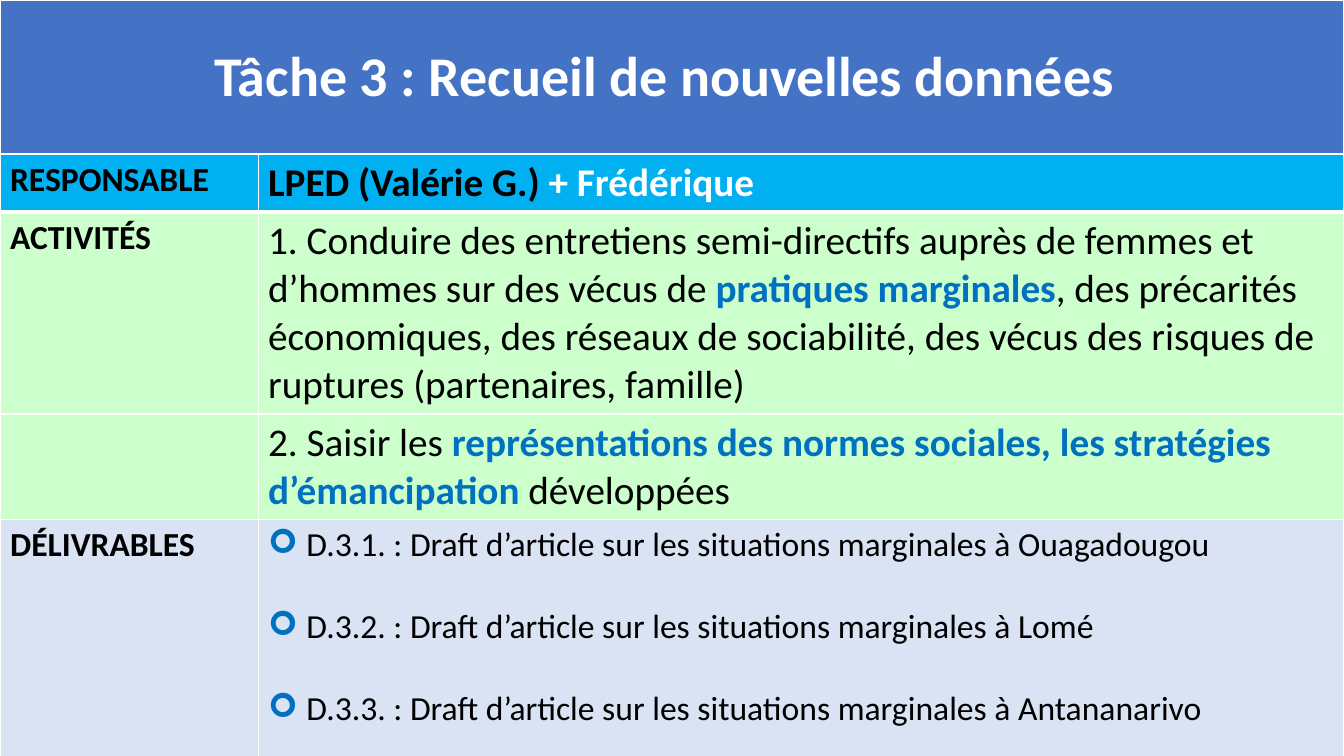
from lxml.etree import SubElement
from pptx import Presentation
from pptx.dml.color import RGBColor
from pptx.enum.shapes import MSO_SHAPE as Shape
from pptx.enum.text import MSO_ANCHOR as Anchor, PP_ALIGN as Align
from pptx.oxml.ns import qn
from pptx.util import Inches, Pt

WHITE = RGBColor(0xFF, 0xFF, 0xFF)
BLACK = RGBColor(0x00, 0x00, 0x00)
TITLE_BLUE = RGBColor(0x44, 0x72, 0xC4)
LEAD_BLUE = RGBColor(0x00, 0xB0, 0xF0)
ACCENT_BLUE = RGBColor(0x00, 0x70, 0xC0)
GREEN = RGBColor(0xCC, 0xFF, 0xCC)
PALE_BLUE = RGBColor(0xDA, 0xE3, 0xF3)

FONT = "Calibri"
TITLE_HEIGHT = 1.53
COLUMN_WIDTHS = [2.56, 10.77]
CITIES = ["Ouagadougou", "Lomé", "Antananarivo"]


def add_text(para, text, size=28, color=BLACK, bold=False):
    span = para.add_run()
    span.text = text
    span.font.name = FONT
    span.font.size = Pt(size)
    span.font.bold = bold
    span.font.color.rgb = color


def add_bullet(para, indent=0.38):
    properties = para._p.get_or_add_pPr()
    properties.set("marL", str(Inches(indent)))
    properties.set("indent", str(-Inches(indent)))
    color = SubElement(properties, qn("a:buClr"))
    SubElement(color, qn("a:srgbClr"), val=str(ACCENT_BLUE))
    SubElement(properties, qn("a:buFont"), typeface="Wingdings")
    SubElement(properties, qn("a:buChar"), char="➢")


def format_cell(cell, fill, bottom_width=1):
    properties = cell._tc.get_or_add_tcPr()
    widths = {"a:lnL": 1, "a:lnR": 1, "a:lnT": 1, "a:lnB": bottom_width}
    for side, width in widths.items():
        line = SubElement(properties, qn(side), w=str(Pt(width)))
        solid = SubElement(line, qn("a:solidFill"))
        SubElement(solid, qn("a:srgbClr"), val=str(WHITE))
    cell.fill.solid()
    cell.fill.fore_color.rgb = fill


def add_title(page, left, top, width, height):
    box = page.shapes.add_shape(
        Shape.RECTANGLE, Inches(left), Inches(top), Inches(width), Inches(height)
    )
    box.shadow.inherit = False
    box.fill.solid()
    box.fill.fore_color.rgb = TITLE_BLUE
    box.line.color.rgb = WHITE
    box.line.width = Pt(1.5)
    frame = box.text_frame
    frame.word_wrap = True
    frame.vertical_anchor = Anchor.MIDDLE
    frame.margin_right = Inches(0.25)
    frame.margin_bottom = Inches(0.11)
    para = frame.paragraphs[0]
    para.alignment = Align.CENTER
    add_text(para, "Tâche 3\u00a0: Recueil de nouvelles données".replace("\u00a0", " "),
             size=40, color=WHITE, bold=True)


def add_task_table(page, left, top, width):
    accent = {"color": ACCENT_BLUE, "bold": True}
    rows = [
        ("RESPONSABLE", 0.55, LEAD_BLUE, [
            ("LPED (Valérie G.) ", {"bold": True}),
            ("+ Frédérique", {"color": WHITE, "bold": True}),
        ]),
        ("ACTIVITÉS", 1.92, GREEN, [
            ("1. Conduire des entretiens semi-directifs auprès de femmes et "
             "d’hommes sur des vécus de ", {}),
            ("pratiques marginales", accent),
            (", des précarités économiques, des réseaux de sociabilité, des "
             "vécus des risques de ruptures (partenaires, famille)", {}),
        ]),
        ("", 1.01, GREEN, [
            ("2. Saisir les ", {}),
            ("représentations des normes sociales, les stratégies "
             "d’émancipation ", accent),
            ("développées", {}),
        ]),
        ("DÉLIVRABLES", 2.5, PALE_BLUE, []),
    ]
    height = sum(row[1] for row in rows)
    table = page.shapes.add_table(
        len(rows), len(COLUMN_WIDTHS),
        Inches(left), Inches(top), Inches(width), Inches(height),
    ).table
    table.horz_banding = False
    for column, column_width in zip(table.columns, COLUMN_WIDTHS):
        column.width = Inches(column_width)

    for index, (label, row_height, fill, spans) in enumerate(rows):
        table.rows[index].height = Inches(row_height)
        label_cell, content_cell = table.rows[index].cells
        for cell in (label_cell, content_cell):
            format_cell(cell, fill, bottom_width=3 if index == 0 else 1)
        if label:
            add_text(label_cell.text_frame.paragraphs[0], label, size=24, bold=True)
        for text, style in spans:
            add_text(content_cell.text_frame.paragraphs[0], text, **style)

    add_deliverables(table.cell(len(rows) - 1, 1).text_frame)


def add_deliverables(frame):
    for number, city in enumerate(CITIES, start=1):
        para = frame.paragraphs[0] if number == 1 else frame.add_paragraph()
        if number < len(CITIES):
            para.space_after = Pt(29.3)
        add_bullet(para)
        add_text(para, f"D.3.{number}. : Draft d’article sur les situations "
                       f"marginales à {city}", size=24)


def main():
    deck = Presentation()
    deck.slide_width = Inches(13.33)
    deck.slide_height = Inches(7.5)
    page = deck.slides.add_slide(deck.slide_layouts[6])
    width = sum(COLUMN_WIDTHS)
    add_title(page, 0, 0, width, TITLE_HEIGHT)
    add_task_table(page, 0, TITLE_HEIGHT, width)
    deck.save("out.pptx")


if __name__ == "__main__":
    main()
